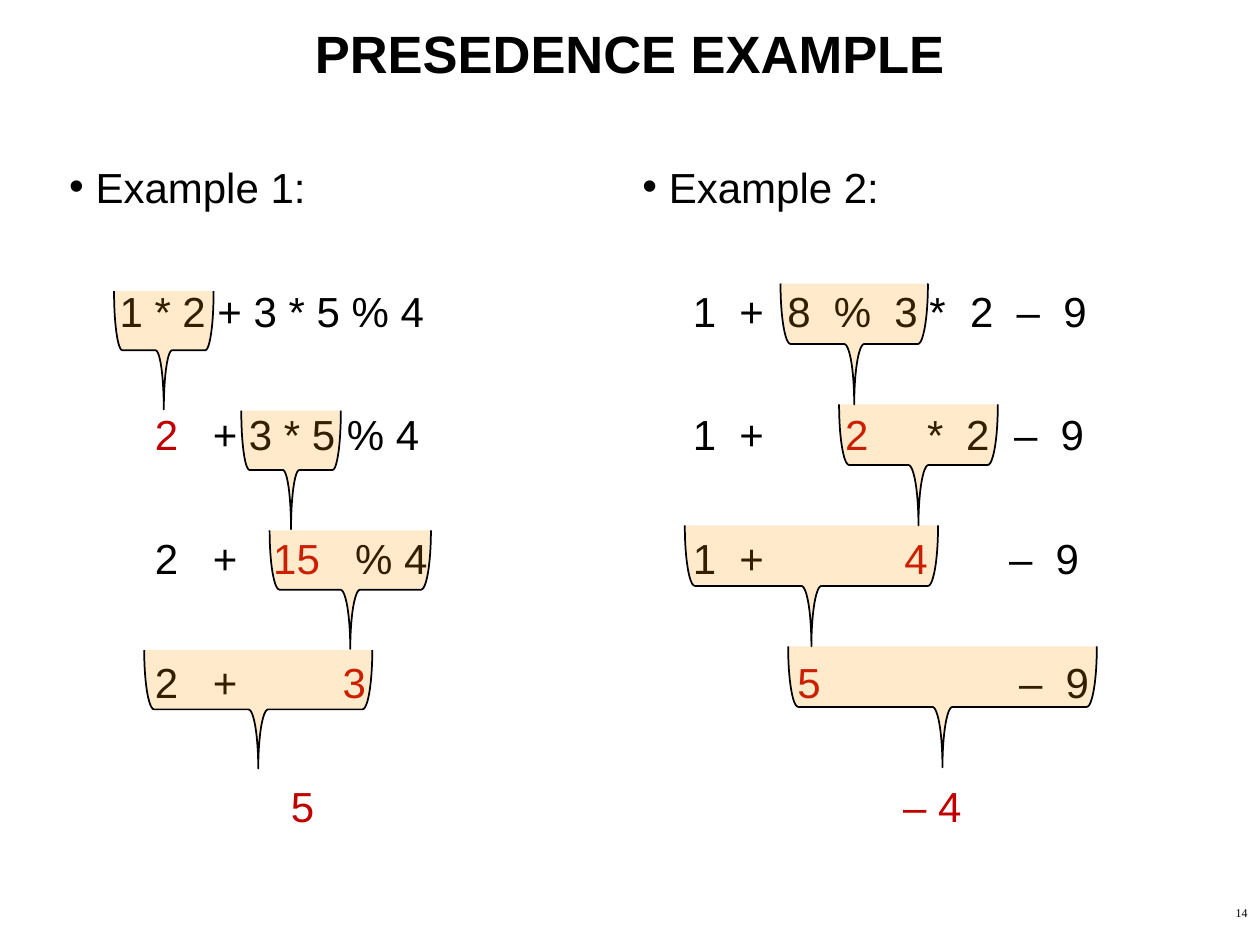
"""Build the operator precedence slide with two worked examples."""
from dataclasses import dataclass
from typing import NamedTuple

from lxml.etree import SubElement
from pptx import Presentation
from pptx.dml.color import RGBColor
from pptx.enum.shapes import MSO_SHAPE
from pptx.enum.text import MSO_ANCHOR, PP_ALIGN
from pptx.oxml.ns import qn
from pptx.util import Inches, Pt

COLORS = {"text": "000000", "result": "C00000", "brace": "FF9900", "line": "000000"}
SLIDE_WIDTH, SLIDE_HEIGHT = Inches(10), Inches(7.5)
COLUMNS, ROWS = 100, 75
BRACE_OPACITY = 20


class Piece(NamedTuple):
    column: float
    text: str
    color: str = "text"


class Brace(NamedTuple):
    center: float
    width: float


@dataclass
class Example:
    heading: str
    left: float
    steps: list[list[Piece]]
    braces: list[Brace]
    brace_top: float
    brace_pitch: float
    brace_height: float


EXAMPLES = [
    Example(
        "Example 1:", 4.5,
        [
            [Piece(4, "1 * 2 + 3 * 5 % 4")],
            [Piece(6.8, "2", "result"), Piece(11.4, "+ 3 * 5 % 4")],
            [Piece(6.8, "2"), Piece(11.4, "+"), Piece(16.2, "15", "result"), Piece(22.7, "% 4")],
            [Piece(6.8, "2"), Piece(11.4, "+"), Piece(21.7, "3", "result")],
            [Piece(17.6, "5", "result")],
        ],
        [Brace(13, 7.9), Brace(23.1, 7.9), Brace(27.8, 12.8), Brace(20.5, 18.1)],
        23.1, 9.5, 9.4,
    ),
    Example(
        "Example 2:", 50,
        [
            [Piece(4, "1"), Piece(7.7, "+"), Piece(11.5, "8"), Piece(15.2, "%"),
             Piece(20, "3 *"), Piece(26, "2"), Piece(29.7, "–"), Piece(33.4, "9")],
            [Piece(4, "1"), Piece(7.7, "+"), Piece(16.1, "2", "result"), Piece(22.6, "*"),
             Piece(25.7, "2"), Piece(29.5, "–"), Piece(33.2, "9")],
            [Piece(4, "1"), Piece(7.7, "+"), Piece(20.8, "4", "result"),
             Piece(29.1, "–"), Piece(32.8, "9")],
            [Piece(12.3, "5", "result"), Piece(29.9, "–"), Piece(33.6, "9")],
            [Piece(20.7, "– 4", "result")],
        ],
        [Brace(67.8, 11.7), Brace(72.9, 12.6), Brace(64.4, 20.1), Brace(74.8, 24.5)],
        22.5, 9.6, 9.6,
    ),
]


def across(columns: float) -> int:
    return round(SLIDE_WIDTH * columns / COLUMNS)


def down(rows: float) -> int:
    return round(SLIDE_HEIGHT * rows / ROWS)


def add_text_frame(slide, left: float, top: float, width: float, height: float):
    shape = slide.shapes.add_textbox(across(left), down(top), across(width), down(height))
    shape.text_frame.word_wrap = True
    return shape.text_frame


def add_run(paragraph, text: str, size: float = 24, color: str = "text",
            font: str = "Arial", bold: bool = False) -> None:
    run = paragraph.add_run()
    run.text = text
    run.font.size = Pt(size)
    run.font.name = font
    run.font.bold = bold
    run.font.color.rgb = RGBColor.from_string(COLORS[color])


def add_heading(paragraph, text: str) -> None:
    paragraph.space_before, paragraph.space_after = Pt(3), Pt(6)
    properties = paragraph._p.get_or_add_pPr()
    properties.set("marL", str(across(2.1)))
    properties.set("indent", str(-across(2.1)))
    SubElement(properties, qn("a:buFont"), typeface="Arial")
    SubElement(properties, qn("a:buChar"), char="•")
    add_run(paragraph, text)


def add_step(paragraph, pieces: list[Piece]) -> None:
    paragraph.space_before, paragraph.space_after = Pt(36), Pt(6)
    tabs = SubElement(paragraph._p.get_or_add_pPr(), qn("a:tabLst"))
    for piece in pieces:
        SubElement(tabs, qn("a:tab"), pos=str(across(piece.column)), algn="l")
        add_run(paragraph, "\t" + piece.text, color=piece.color)


def add_brace(slide, brace: Brace, top: float, height: float) -> None:
    shape = slide.shapes.add_shape(
        MSO_SHAPE.LEFT_BRACE,
        across(brace.center - height / 2), down(top + (height - brace.width) / 2),
        across(height), down(brace.width),
    )
    shape.rotation = 270
    shape.shadow.inherit = False
    shape.fill.solid()
    shape.fill.fore_color.rgb = RGBColor.from_string(COLORS["brace"])
    color = shape._element.spPr.find(qn("a:solidFill")).find(qn("a:srgbClr"))
    SubElement(color, qn("a:alpha"), val=str(BRACE_OPACITY * 1000))
    shape.line.color.rgb = RGBColor.from_string(COLORS["line"])
    shape.line.width = Pt(1)


def add_example(slide, example: Example) -> None:
    frame = add_text_frame(slide, example.left, 12.3, 45.5, 59)
    add_heading(frame.paragraphs[0], example.heading)
    for pieces in example.steps:
        add_step(frame.add_paragraph(), pieces)
    for index, brace in enumerate(example.braces):
        add_brace(slide, brace, example.brace_top + index * example.brace_pitch,
                  example.brace_height)


def main() -> None:
    presentation = Presentation()
    presentation.slide_width, presentation.slide_height = SLIDE_WIDTH, SLIDE_HEIGHT
    slide = presentation.slides.add_slide(presentation.slide_layouts[6])

    title = add_text_frame(slide, 0, 0, 100, 8.4)
    title.vertical_anchor = MSO_ANCHOR.MIDDLE
    title.paragraphs[0].alignment = PP_ALIGN.CENTER
    add_run(title.paragraphs[0], "PRESEDENCE EXAMPLE", size=30, bold=True)

    for example in EXAMPLES:
        add_example(slide, example)

    number = add_text_frame(slide, 79.2, 71.4, 20.8, 3.6).paragraphs[0]
    number.alignment = PP_ALIGN.RIGHT
    add_run(number, "14", size=6.8, font="Times New Roman")
    presentation.save("out.pptx")


if __name__ == "__main__":
    main()
